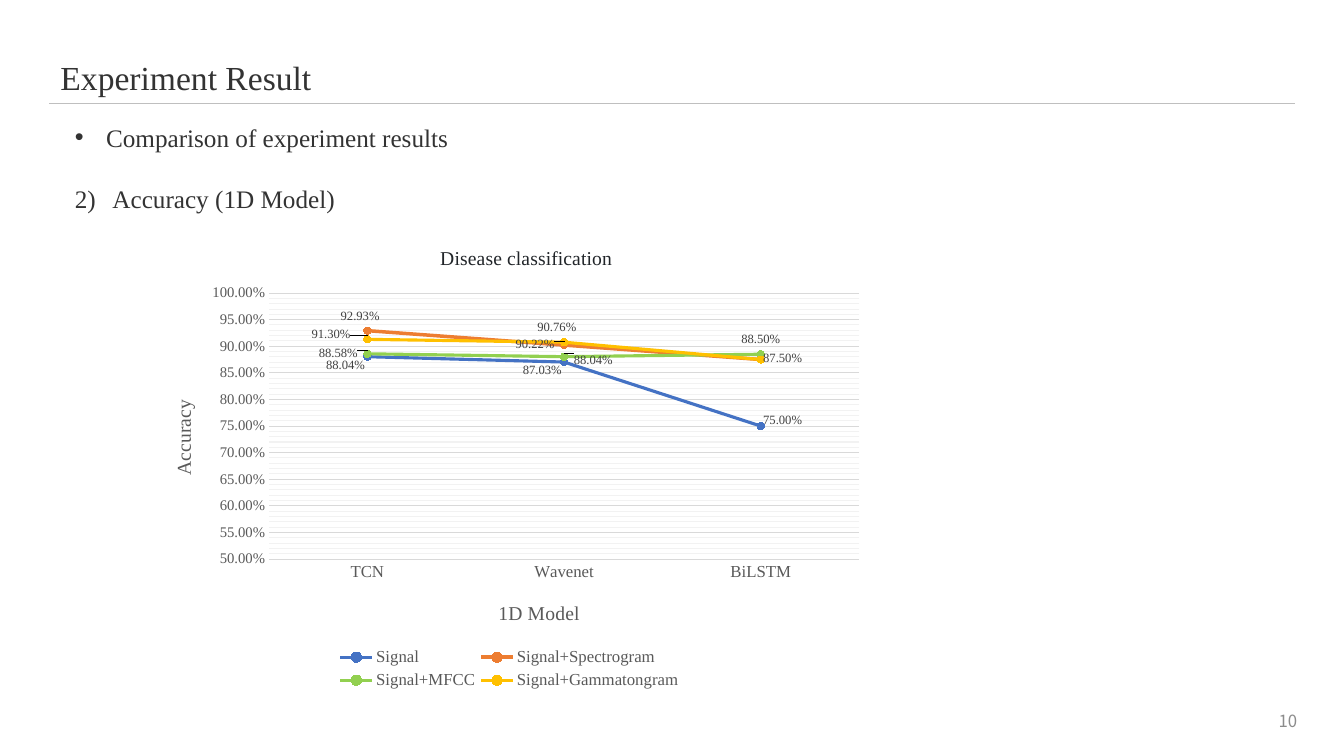
from copy import deepcopy

from lxml import etree
from pptx import Presentation
from pptx.chart.data import CategoryChartData
from pptx.dml.color import RGBColor
from pptx.enum.chart import (XL_CHART_TYPE, XL_LABEL_POSITION, XL_LEGEND_POSITION,
                             XL_MARKER_STYLE, XL_TICK_MARK)
from pptx.enum.text import MSO_ANCHOR, PP_ALIGN
from pptx.oxml.ns import qn
from pptx.util import Cm, Pt

SERIF, SANS = "Times New Roman", "Noto Sans CJK KR"
TITLE = "Experiment Result"
PAGE = "10"
# text, indent in cm, space before in pt, bullet tag, bullet attributes
BODY = [
    ("Comparison of experiment results", 0.79, 0, "a:buChar", {"char": "•"}),
    ("Accuracy (1D Model)", 0.95, 22, "a:buAutoNum", {"type": "arabicParenR", "startAt": "2"}),
]
MODELS = ["TCN", "Wavenet", "BiLSTM"]
# name, colour, line width, values, label shifts as fractions of the chart (None: no label)
SERIES = [
    ("Signal", "4472C4", 2.25, (0.8804, 0.8703, 0.75),
     [(-0.03, 0.05), (-0.03, 0.05), (0.03, 0.02)]),
    ("Signal+Spectrogram", "ED7D31", 2.5, (0.9293, 0.9022, 0.875),
     [(-0.01, 0), (-0.04, 0.03), (0.03, 0.03)]),
    ("Signal+MFCC", "92D050", 2.25, (0.8858, 0.8804, 0.885),
     [(-0.04, 0.03), (0.04, 0.04), (0, 0)]),
    ("Signal+Gammatongram", "FFC000", 2.25, (0.913, 0.9076, 0.875),
     [(-0.05, 0.02), (-0.01, 0), None]),
]


def color(hex_string):
    return RGBColor.from_string(hex_string)


def style(font, size, hex_string, name=SERIF):
    font.size, font.name, font.bold = Pt(size), name, False
    font.color.rgb = color(hex_string)


def rule(line, hex_string, width):
    line.color.rgb = color(hex_string)
    line.width = Pt(width)


def place(sp, left, top, width, height):
    sp.left, sp.top, sp.width, sp.height = map(Cm, (left, top, width, height))


def layout_of(x, y, w=None, h=None, inner=False, edge=True):
    """Manual chart layout; without edge, x and y are shifts from the default place."""
    layout = etree.Element(qn("c:layout"))
    manual = etree.SubElement(layout, qn("c:manualLayout"))
    parts = [("layoutTarget", "inner")] if inner else []
    parts += [("xMode", "edge"), ("yMode", "edge")] if edge else []
    parts += [("x", x), ("y", y)]
    parts += [("w", w), ("h", h)] if w else []
    for tag, value in parts:
        etree.SubElement(manual, qn("c:" + tag), val=str(value))
    return layout


def set_layout(parent, layout, after=None):
    """Put the layout behind the child named after, or first."""
    for old in parent.findall(qn("c:layout")):
        parent.remove(old)
    before = parent.find(qn(after)) if after else None
    if before is None:
        parent.insert(0, layout)
    else:
        before.addnext(layout)


def title_chart_part(part, text, size, hex_string, x, y):
    title = part.chart_title if hasattr(part, "chart_title") else part.axis_title
    tf = title.text_frame
    tf.text = text
    style(tf.paragraphs[0].runs[0].font, size, hex_string)
    element = tf._txBody.getparent().getparent()
    set_layout(element, layout_of(x, y), "c:tx")


def add_gridlines(axis):
    axis.has_major_gridlines, axis.has_minor_gridlines = True, True
    line = axis.major_gridlines.format.line
    major = axis._element.find(qn("c:majorGridlines"))
    minor = axis._element.find(qn("c:minorGridlines"))
    rule(line, "F2F2F2", 0.75)
    minor.append(deepcopy(major.find(qn("c:spPr"))))
    rule(line, "D9D9D9", 0.75)


def add_accuracy_chart(s):
    data = CategoryChartData(number_format="0.00%")
    data.categories = MODELS
    for name, _, _, values, _ in SERIES:
        data.add_series(name, values)
    chart = s.shapes.add_chart(XL_CHART_TYPE.LINE_MARKERS, Cm(3.66), Cm(5.74),
                               Cm(18.36), Cm(11.76), data).chart
    style(chart.font, 10, "000000")
    title_chart_part(chart, "Disease classification", 14, "212529", 0.4, 0.03)
    chart.has_legend = True
    legend = chart.legend
    legend.position, legend.include_in_layout = XL_LEGEND_POSITION.BOTTOM, False
    style(legend.font, 12, "595959")
    set_layout(legend._element, layout_of(0.26, 0.89, 0.48, 0.11), "c:legendPos")
    plot_area = chart._chartSpace.chart.plotArea
    set_layout(plot_area, layout_of(0.17, 0.14, 0.81, 0.57, inner=True))

    cat, val = chart.category_axis, chart.value_axis
    for axis, text, size, x, y in ((cat, "1D Model", 12, 0.48, 0.79),
                                   (val, "Accuracy", 10.5, 0.03, 0.36)):
        title_chart_part(axis, text, 14, "595959", x, y)
        style(axis.tick_labels.font, size, "595959")
        axis.major_tick_mark = axis.minor_tick_mark = XL_TICK_MARK.NONE
    rule(cat.format.line, "D9D9D9", 0.75)
    val.format.line.fill.background()
    val.minimum_scale, val.maximum_scale = 0.5, 1
    val.major_unit, val.minor_unit = 0.05, 0.01
    add_gridlines(val)
    val.tick_labels.number_format = "0.00%"
    val.tick_labels.number_format_is_linked = False

    plot = chart.plots[0]
    plot.vary_by_categories = False
    for series, (_, hex_string, width, _, shifts) in zip(plot.series, SERIES):
        series.smooth = False
        rule(series.format.line, hex_string, width)
        marker = series.marker
        marker.style, marker.size = XL_MARKER_STYLE.CIRCLE, 5
        marker.format.fill.solid()
        marker.format.fill.fore_color.rgb = color(hex_string)
        marker.format.line.color.rgb = color(hex_string)
        labels = series.data_labels
        labels.show_value, labels.position = True, XL_LABEL_POSITION.ABOVE
        labels.number_format, labels.number_format_is_linked = "0.00%", False
        style(labels.font, 9, "404040")
        for i, shift in enumerate(shifts):
            label = series.points[i].data_label
            label.position = XL_LABEL_POSITION.ABOVE
            style(label.font, 9, "404040")
            element = labels._element.findall(qn("c:dLbl"))[i]
            if shift:
                set_layout(element, layout_of(*shift, edge=False), "c:idx")
            else:
                for child in list(element)[1:]:
                    element.remove(child)
                etree.SubElement(element, qn("c:delete"), val="1")


def main():
    prs = Presentation()
    prs.slide_width, prs.slide_height = Cm(33.87), Cm(19.05)
    s = prs.slides.add_slide(prs.slide_layouts[1])

    title, body = s.placeholders[0], s.placeholders[1]
    place(title, 1.27, 1.3, 12, 1.27)
    title.text_frame.text = TITLE
    title.text_frame.vertical_anchor = MSO_ANCHOR.TOP
    p = title.text_frame.paragraphs[0]
    p.alignment = PP_ALIGN.LEFT
    style(p.runs[0].font, 24, "333333")

    place(body, 1.63, 2.95, 31.6, 2.6)
    tf = body.text_frame
    tf.text = "\n".join(item[0] for item in BODY)
    for p, (_, indent, before, tag, attributes) in zip(tf.paragraphs, BODY):
        p.space_before = Pt(before)
        style(p.runs[0].font, 18, "333333")
        pPr = p._p.get_or_add_pPr()
        pPr.set("marL", str(Cm(indent)))
        pPr.set("indent", str(-Cm(indent)))
        etree.SubElement(pPr, qn(tag), attributes)

    line = s.shapes.add_connector(1, Cm(1.24), Cm(2.6), Cm(32.64), Cm(2.6))
    rule(line.line, "BFBFBF", 0.5)
    etree.SubElement(line._element.spPr, qn("a:effectLst"))

    add_accuracy_chart(s)

    number = s.shapes.add_textbox(Cm(25.32), Cm(17.65), Cm(7.62), Cm(1.02))
    tf = number.text_frame
    tf.word_wrap, tf.vertical_anchor = True, MSO_ANCHOR.MIDDLE
    tf.text = PAGE
    tf.paragraphs[0].alignment = PP_ALIGN.RIGHT
    style(tf.paragraphs[0].runs[0].font, 12, "8C8C8C", SANS)

    prs.save("out.pptx")


if __name__ == "__main__":
    main()
